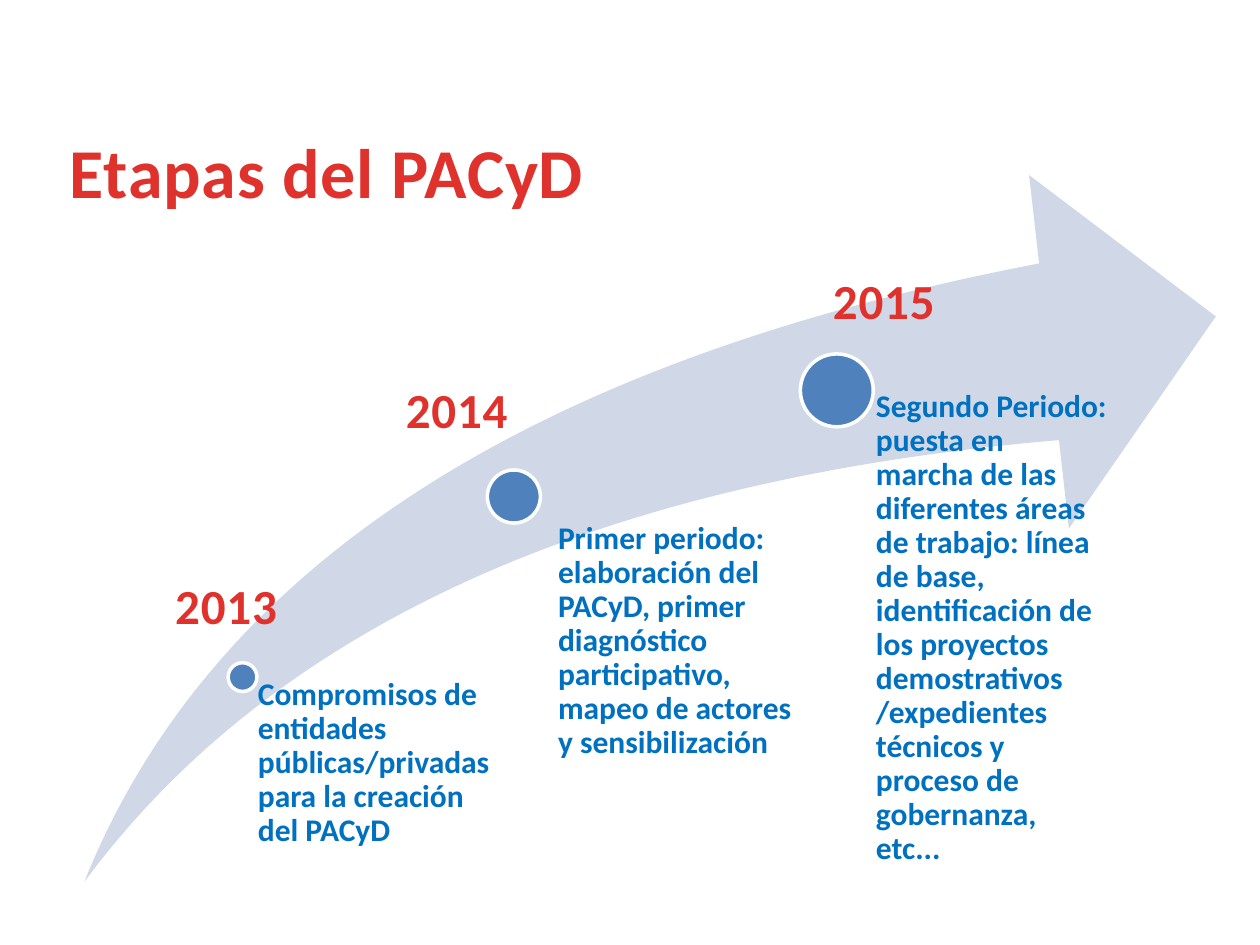
import pptx
import pptx.dml.color
import pptx.enum.shapes
import pptx.enum.text
import pptx.util

Cm = pptx.util.Cm
Pt = pptx.util.Pt

COLORS = {
    "arrow": "D0D8E8",
    "dot": "4F81BD",
    "outline": "FFFFFF",
    "heading": "E0322D",
    "body": "0070C0",
}

STAGES = [
    {
        "year": "2013",
        "label": (3.25, 11.48),
        "dot": (4.89, 13.65, 0.58),
        "box": (4.9, 13.67, 5.31, 4.11),
        "inset": 0.3,
        "text": "Compromisos de entidades públicas/privadas para la creación del PACyD",
    },
    {
        "year": "2014",
        "label": (7.9, 7.52),
        "dot": (10.36, 10.01, 1.07),
        "box": (10.69, 10.52, 5.46, 4.85),
        "inset": 0.56,
        "text": "Primer periodo: elaboración del PACyD, primer diagnóstico "
                "participativo, mapeo de actores y sensibilización",
    },
    {
        "year": "2015",
        "label": (16.51, 5.33),
        "dot": (16.87, 7.87, 1.47),
        "box": (16.87, 7.87, 5.46, 9.91),
        "inset": 0.79,
        "text": "Segundo Periodo: puesta en marcha de las diferentes áreas de "
                "trabajo: línea de base, identificación de los proyectos "
                "demostrativos /expedientes técnicos y proceso de gobernanza, etc...",
    },
]


class StageSlide:
    """Holds the text style and the slide, and draws each kind of element."""

    def __init__(self, slide, font="Calibri"):
        self.slide = slide
        self.font = font

    def color(self, name):
        return pptx.dml.color.RGBColor.from_string(COLORS[name])

    def shape(self, kind, left, top, width, height, fill):
        shape = self.slide.shapes.add_shape(
            kind, Cm(left), Cm(top), Cm(width), Cm(height))
        shape.shadow.inherit = False
        shape.fill.solid()
        shape.fill.fore_color.rgb = self.color(fill)
        shape.line.fill.background()
        return shape

    def arrow(self, left, top, width, height):
        arrow = self.shape(pptx.enum.shapes.MSO_SHAPE.SWOOSH_ARROW,
                           left, top, width, height, "arrow")
        arrow.adjustments[0] = 0.25
        arrow.adjustments[1] = 0.25

    def dot(self, center_x, center_y, size):
        dot = self.shape(pptx.enum.shapes.MSO_SHAPE.OVAL, center_x - size / 2,
                         center_y - size / 2, size, size, "dot")
        dot.line.color.rgb = self.color("outline")
        dot.line.width = Pt(2)

    def styled_text(self, frame, text, size, color):
        frame.vertical_anchor = pptx.enum.text.MSO_ANCHOR.TOP
        para = frame.paragraphs[0]
        span = para.add_run()
        span.text = text
        para.font.name = self.font
        para.font.size = Pt(size)
        para.font.bold = True
        para.font.color.rgb = self.color(color)
        return para

    def heading(self, box, text, size):
        frame = box.text_frame
        frame.word_wrap = False
        frame.auto_size = pptx.enum.text.MSO_AUTO_SIZE.NONE
        para = self.styled_text(frame, text, size, "heading")
        para.alignment = pptx.enum.text.PP_ALIGN.CENTER
        para.runs[0]._r.get_or_add_rPr().set("spc", "50")

    def title(self, text, left, top, width, height):
        title = self.slide.shapes.title
        title.left, title.top = Cm(left), Cm(top)
        title.width, title.height = Cm(width), Cm(height)
        self.heading(title, text, 40)

    def year(self, text, left, top):
        box = self.slide.shapes.add_textbox(Cm(left), Cm(top), Cm(2.62), Cm(1.45))
        self.heading(box, text, 28)

    def description(self, text, left, top, width, height, inset):
        box = self.slide.shapes.add_textbox(
            Cm(left), Cm(top), Cm(width), Cm(height))
        frame = box.text_frame
        frame.word_wrap = True
        frame.margin_left = Cm(inset)
        frame.margin_top = frame.margin_right = frame.margin_bottom = 0
        self.styled_text(frame, text, 18, "body").line_spacing = 0.9


def main():
    deck = pptx.Presentation()
    deck.slide_width, deck.slide_height = Cm(25.4), Cm(19.05)
    page = StageSlide(deck.slides.add_slide(deck.slide_layouts[5]))
    page.arrow(1.7, 3.53, 22.81, 14.25)
    for stage in STAGES:
        page.dot(*stage["dot"])
        page.description(stage["text"], *stage["box"], stage["inset"])
        page.year(stage["year"], *stage["label"])
    page.title("Etapas del PACyD", 1.09, 2.46, 11, 1.96)
    deck.save("out.pptx")


if __name__ == "__main__":
    main()
